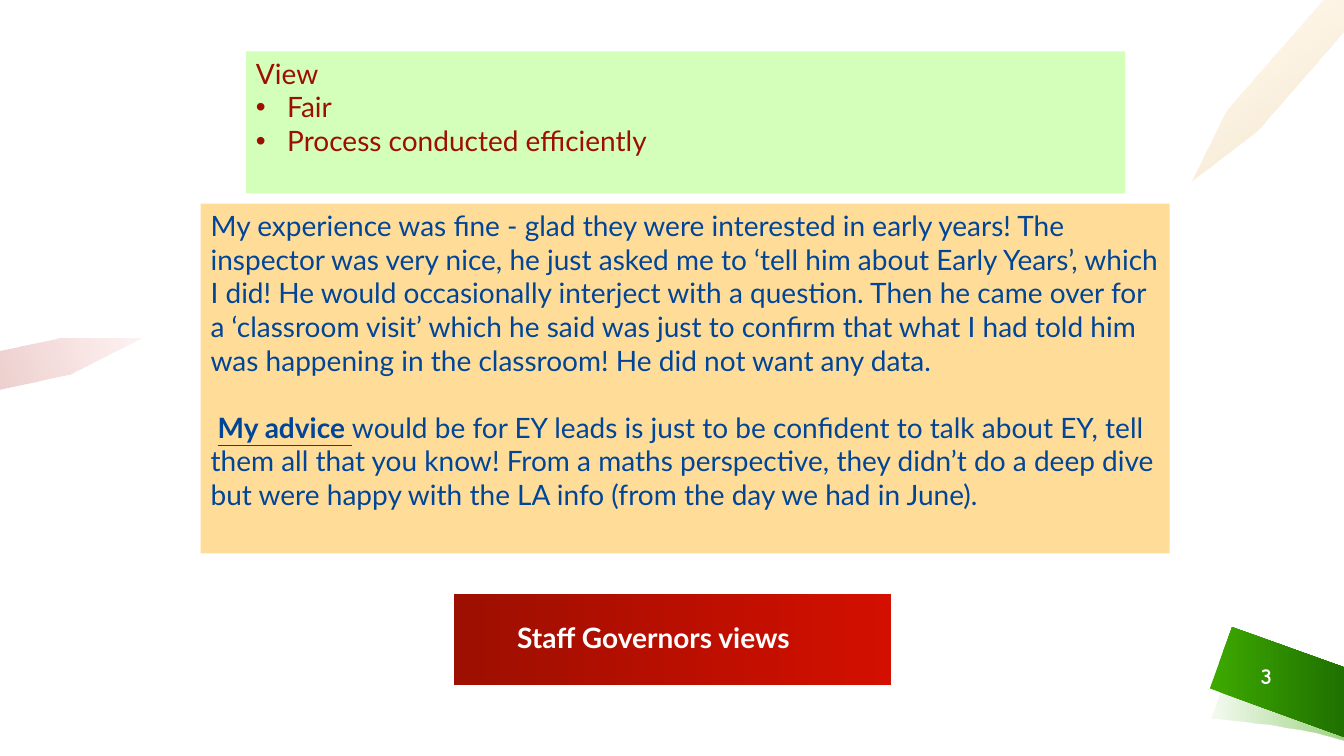
from lxml import etree
from pptx import Presentation
from pptx.dml.color import RGBColor
from pptx.enum.shapes import MSO_SHAPE as SHAPE
from pptx.enum.text import MSO_ANCHOR as ANCHOR, PP_ALIGN as ALIGN
from pptx.oxml.ns import qn
from pptx.util import Inches, Pt

W, H = 13.33, 7.5
C = {"green": "3DA800", "dark_green": "1F7100", "red": "D30F00",
     "dark_red": "9D0F00", "amber": "FFAA00", "brown": "C07400",
     "mint": "D3FFBB", "peach": "FFDD99", "blue": "004597", "white": "FFFFFF"}

TITLE = "Staff Governors views"
PAGE = "3"
# Paragraph: (runs as (text, emphasised), bullet, left margin, first-line indent, space before)
VIEWS = [([("View", False)], None, 0, 0, 0),
         ([("Fair", False)], "•", 0.31, -0.31, 0),
         ([("Process conducted efficiently", False)], "•", 0.31, -0.31, 0)]
EXPERIENCE = [
    ([("My experience was fine - glad they were interested in early years! "
       "The inspector was very nice, he just asked me to ‘tell him about Early Years’, "
       "which I did! He would occasionally interject with a question. Then he came over "
       "for a ‘classroom visit’ which he said was just to confirm that what I had told "
       "him was happening in the classroom! He did not want any data.", False)],
     None, 0, 0, 0),
    ([("My advice ", True),
      ("would be for EY leads is just to be confident to talk about EY, tell them all "
       "that you know! From a maths perspective, they didn’t do a deep dive but were "
       "happy with the LA info (from the day we had in June).", False)],
     None, 0, 0.07, 24),
]
PANELS = [((2.44, 0.51, 8.72, 1.41), "mint", "dark_red", VIEWS),
          ((1.99, 2.02, 9.61, 3.47), "peach", "blue", EXPERIENCE)]


def curve(p0, p1, p2, p3, steps=12):
    """Points along a cubic Bezier curve, both ends included."""
    weights = [((1 - t) ** 3, 3 * t * (1 - t) ** 2, 3 * t * t * (1 - t), t ** 3)
               for t in (i / steps for i in range(steps + 1))]
    return [tuple(sum(w * p[k] for w, p in zip(ws, (p0, p1, p2, p3))) for k in (0, 1))
            for ws in weights]


RIBBON_SHADE = (curve((12.02, 7.13), (12.02, 7.13), (12.78, 7.18), (W, 7.35))
                + curve((W, 6.68), (12.72, 6.51), (12.24, 6.52), (12.24, 6.52)))
# Outline, gradient stops as (share, colour, opacity in percent), clockwise angle
DECOR = [
    (RIBBON_SHADE, [(0.03, "green", 6), (1, "green", 50)], 0),
    ([(W, 6.62), (12.22, 6.22), (12, 6.83), (W, 7.31)],
     [(0.03, "green", 100), (1, "dark_green", 100)], 0),
    ([(1.4, 3.36), (0.58, 3.36), (0, 3.48), (0, 3.86), (0.7, 3.71)],
     [(0, "red", 5), (1, "dark_red", 20)], 164),
    ([(13.12, 0), (12.17, 1.09), (11.82, 1.8), (12.47, 1.3), (W, 0.31), (W, 0)],
     [(0, "amber", 5), (1, "brown", 20)], 53),
]


def rgb(name):
    return RGBColor.from_string(C[name])


def place(sp, box):
    for name, value in zip(("left", "top", "width", "height"), box):
        setattr(sp, name, Inches(value))


def set_gradient(sp, stops, angle):
    sp.fill.gradient()
    sp.fill.gradient_angle = -angle % 360
    for stop, (share, color, _) in zip(sp.fill.gradient_stops, stops):
        stop.position = share
        stop.color.rgb = rgb(color)
    colors = sp._element.spPr.iter(qn("a:srgbClr"))
    for node, (_, _, opacity) in zip(list(colors), stops):
        if opacity < 100:
            etree.SubElement(node, qn("a:alpha")).set("val", str(opacity * 1000))


def add_run(p, text, color, **formats):
    r = p.add_run()
    r.text = text
    for name, value in ({"name": "Lato", "size": Pt(20)} | formats).items():
        setattr(r.font, name, value)
    r.font.color.rgb = rgb(color)


def set_indent(p, bullet, margin, indent):
    ppr = p._p.get_or_add_pPr()
    ppr.set("marL", str(Inches(margin)))
    ppr.set("indent", str(Inches(indent)))
    if bullet:
        etree.SubElement(ppr, qn("a:buFont")).set("typeface", "Arial")
        etree.SubElement(ppr, qn("a:buChar")).set("char", bullet)


def add_decor(s, points, stops, angle):
    hundredths = [(x * 100, y * 100) for x, y in points]
    builder = s.shapes.build_freeform(*hundredths[0], scale=Inches(0.01))
    builder.add_line_segments(hundredths[1:], close=True)
    sp = builder.convert_to_shape()
    sp.shadow.inherit = False
    sp.line.fill.background()
    set_gradient(sp, stops, angle)


def add_panel(s, box, fill, color, paragraphs):
    sp = s.shapes.add_shape(SHAPE.RECTANGLE, *map(Inches, box))
    sp.shadow.inherit = False
    sp.fill.solid()
    sp.fill.fore_color.rgb = rgb(fill)
    sp.line.fill.background()
    tf = sp.text_frame
    tf.word_wrap = True
    tf.vertical_anchor = ANCHOR.TOP
    for i, (runs, bullet, margin, indent, before) in enumerate(paragraphs):
        p = tf.add_paragraph() if i else tf.paragraphs[0]
        set_indent(p, bullet, margin, indent)
        p.alignment = ALIGN.LEFT
        if before:
            p.space_before = Pt(before)
        for text, strong in runs:
            add_run(p, text, color, bold=strong, underline=strong)


def add_title(s):
    title = s.shapes.title
    place(title, (4.5, 5.89, 4.34, 0.91))
    set_gradient(title, [(0, "red", 100), (1, "dark_red", 100)], 180)
    tf = title.text_frame
    tf.word_wrap = True
    tf.vertical_anchor = ANCHOR.MIDDLE
    tf.margin_left = Inches(0.63)
    p = tf.paragraphs[0]
    p.alignment = ALIGN.LEFT
    p.line_spacing = 0.9
    add_run(p, TITLE, "white", bold=True)


def add_page_number(s):
    tf = s.shapes.add_textbox(*map(Inches, (12.21, 6.5, 0.7, 0.4))).text_frame
    tf.word_wrap = True
    tf.vertical_anchor = ANCHOR.MIDDLE
    p = tf.paragraphs[0]
    p.alignment = ALIGN.CENTER
    add_run(p, PAGE, "white", name="Comic Neue", size=Pt(16), bold=True)


def main():
    prs = Presentation()
    prs.slide_width, prs.slide_height = Inches(W), Inches(H)
    s = prs.slides.add_slide(prs.slide_layouts[5])
    for decor in DECOR:
        add_decor(s, *decor)
    add_title(s)
    add_page_number(s)
    for panel in PANELS:
        add_panel(s, *panel)
    prs.save("out.pptx")


if __name__ == "__main__":
    main()
